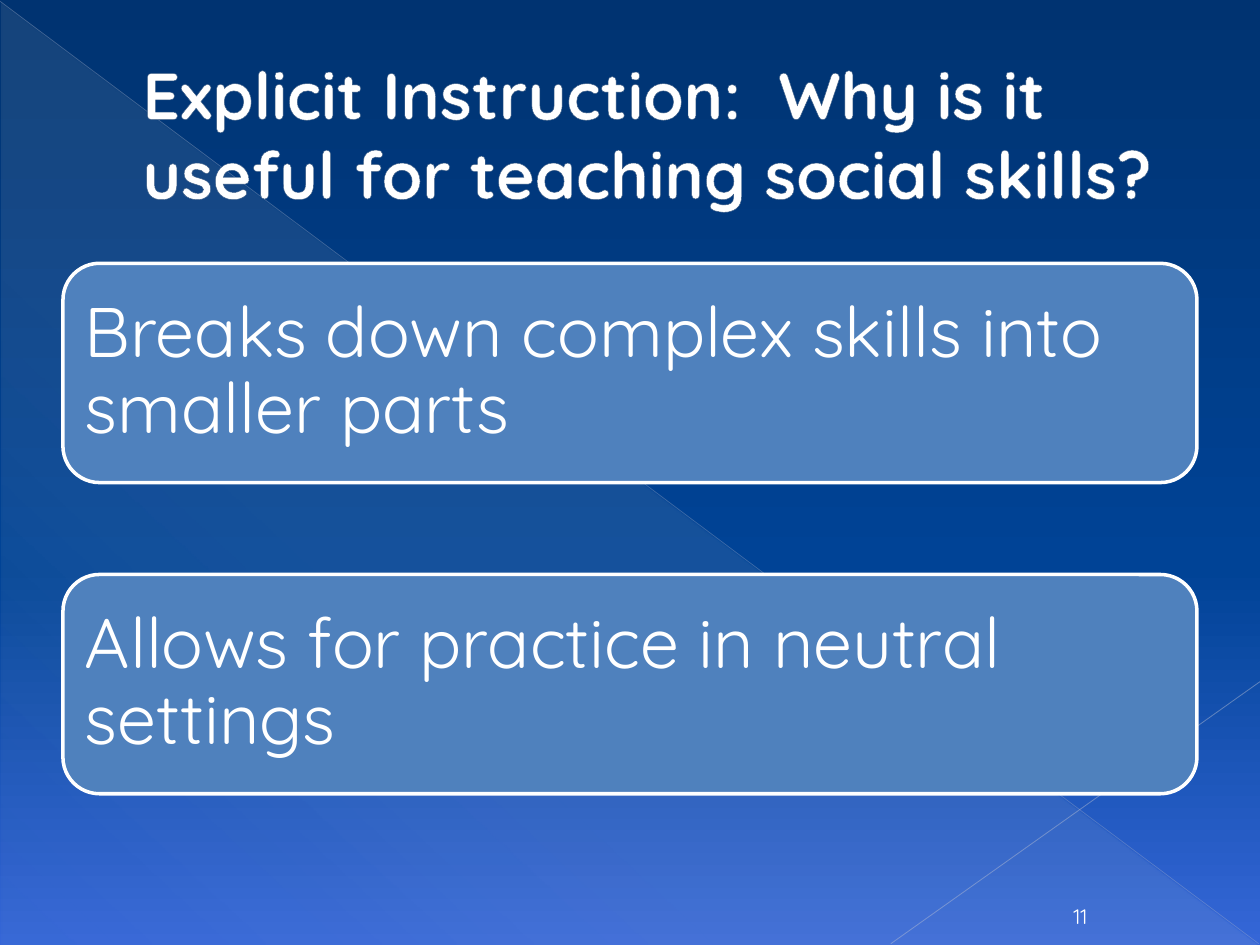
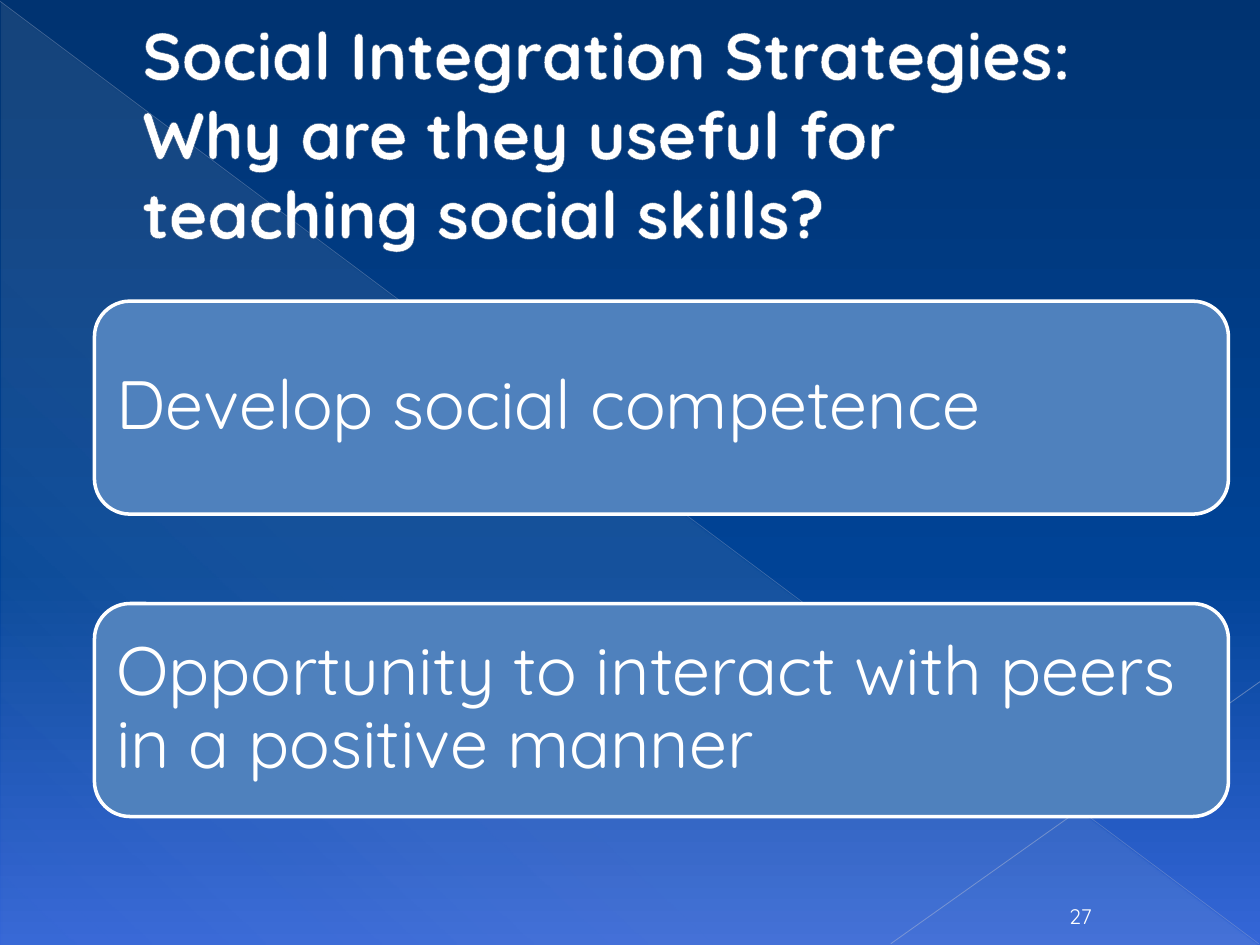
from lxml import etree
from pptx import Presentation
from pptx.dml.color import RGBColor
from pptx.enum.shapes import MSO_CONNECTOR, MSO_SHAPE
from pptx.enum.text import MSO_ANCHOR, PP_ALIGN
from pptx.oxml.ns import qn
from pptx.util import Inches, Pt

LINE = MSO_CONNECTOR.STRAIGHT
TRIANGLE, CARD = MSO_SHAPE.RIGHT_TRIANGLE, MSO_SHAPE.ROUNDED_RECTANGLE
MIDDLE, BOTTOM = MSO_ANCHOR.MIDDLE, MSO_ANCHOR.BOTTOM
LEFT, CENTER = PP_ALIGN.LEFT, PP_ALIGN.CENTER

WHITE = RGBColor(0xFF, 0xFF, 0xFF)
NAVY = RGBColor(0x00, 0x33, 0x71)
ROYAL = RGBColor(0x00, 0x43, 0x96)
SKY = RGBColor(0x35, 0x66, 0xD7)
CREAM = RGBColor(0xEE, 0xEC, 0xE1)
FALLING_LINE = RGBColor(0xAD, 0xB6, 0xCE)
RISING_LINE = RGBColor(0xB6, 0xBE, 0xD3)
CARD_BLUE = RGBColor(0x4F, 0x81, 0xBD)
OUTLINE = RGBColor(0x37, 0x59, 0x83)

FONT = "Quicksand"
TITLE_BOX = (0.5, 0.29, 9, 1.53)
NUMBER_BOX = (8.3, 7.09, 0.55, 0.33)
BACKGROUND_STOPS = [(0, NAVY, 100), (60, ROYAL, 100), (100, SKY, 100)]
TRIANGLE_STOPS = [(0, CREAM, 10), (70, CREAM, 8), (100, CREAM, 1)]
DIAGONALS = [
    ((0, 0.01), (9.99, 7.49), FALLING_LINE, 0.39, 35),
    ((10, 5.41), (7.07, 7.49), RISING_LINE, 0.47, 45),
]

SLIDES = [
    {
        "title": "Explicit Instruction:  Why is it useful for teaching social skills?",
        "points": ["Breaks down complex skills into smaller parts",
                   "Allows for practice in neutral settings"],
        "box": (0.5, 2.09, 9, 4.21), "card_height": 1.74, "size": 40,
        "number": "11",
    },
    {
        "title": "Social Integration Strategies:  Why are they useful for teaching social skills?",
        "points": ["Develop social competence",
                   "Opportunity to interact with peers in a positive manner"],
        "box": (0.75, 2.39, 9, 4.09), "card_height": 1.69, "size": 39,
        "number": "27",
    },
]


def add_element(parent, tag, **attributes):
    return etree.SubElement(parent, qn(tag), {k: str(v) for k, v in attributes.items()})


def add_color(parent, color, opacity=100):
    clr = add_element(parent, "a:srgbClr", val=color)
    if opacity < 100:
        add_element(clr, "a:alpha", val=opacity * 1000)


def set_gradient(fill, element, stops, angle):
    """Fill with (position, colour, opacity) stops, all in percent; angle is clockwise."""
    fill.gradient()
    grad = element.find(".//" + qn("a:gradFill"))
    for child in list(grad):
        grad.remove(child)
    stop_list = add_element(grad, "a:gsLst")
    for position, color, opacity in stops:
        add_color(add_element(stop_list, "a:gs", pos=position * 1000), color, opacity)
    add_element(grad, "a:lin", ang=angle * 60000, scaled=0)


def write(shape, text, size, anchor, align=LEFT, bold=False, margins=None):
    tf = shape.text_frame
    frame = {"word_wrap": True, "vertical_anchor": anchor, **(margins or {})}
    for name, value in frame.items():
        setattr(tf, name, value)
    p = tf.paragraphs[0]
    p.alignment = align
    r = p.add_run()
    r.text = text
    for name, value in {"name": FONT, "size": Pt(size), "bold": bold}.items():
        setattr(r.font, name, value)
    r.font.color.rgb = WHITE
    return p, r


def add_text_box(s, box):
    return s.shapes.add_textbox(*map(Inches, box))


def add_backdrop(s):
    set_gradient(s.background.fill, s.element, BACKGROUND_STOPS, 90)
    sp = s.shapes.add_shape(TRIANGLE, *map(Inches, (0.01, 0.02, 9.98, 7.48)))
    sp.shadow.inherit = False
    sp.line.fill.background()
    set_gradient(sp.fill, sp.element, TRIANGLE_STOPS, 133)
    for start, end, color, width, opacity in DIAGONALS:
        line = s.shapes.add_connector(LINE, *map(Inches, start + end))
        line.line.width = Pt(width)
        line.line.color.rgb = color
        clr = line.element.spPr.find(".//" + qn("a:srgbClr"))
        add_element(clr, "a:alpha", val=opacity * 1000)
        add_element(line.element.spPr, "a:effectLst")


def add_title(s, box, text):
    margins = {"margin_left": Inches(0.63)}
    p, r = write(add_text_box(s, box), text, 37.8, MIDDLE, bold=True, margins=margins)
    ln = etree.Element(qn("a:ln"), w=str(Pt(0.5)))
    add_color(add_element(ln, "a:solidFill"), OUTLINE)
    r.font._element.insert(0, ln)


def add_cards(s, box, points, height, size):
    """Spread the cards evenly from the top to the bottom of the box."""
    left, top, width, total = box
    step = (total - height) / (len(points) - 1)
    sides = ("left", "top", "right", "bottom")
    margins = {f"margin_{side}": Inches(0.09) for side in sides}
    for i, point in enumerate(points):
        sp = s.shapes.add_shape(CARD, *map(Inches, (left, top + i * step, width, height)))
        sp.shadow.inherit = False
        sp.fill.solid()
        sp.fill.fore_color.rgb = CARD_BLUE
        sp.line.color.rgb = WHITE
        sp.line.width = Pt(2)
        p, r = write(sp, point, size, MIDDLE, margins=margins)
        p.line_spacing = 0.9


def add_slide(prs, content):
    s = prs.slides.add_slide(prs.slide_layouts[6])
    add_backdrop(s)
    add_title(s, TITLE_BOX, content["title"])
    add_cards(s, content["box"], content["points"], content["card_height"], content["size"])
    write(add_text_box(s, NUMBER_BOX), content["number"], 12, BOTTOM, CENTER)


def main():
    prs = Presentation()
    prs.slide_width, prs.slide_height = Inches(10), Inches(7.5)
    for content in SLIDES:
        add_slide(prs, content)
    prs.save("out.pptx")


if __name__ == "__main__":
    main()
